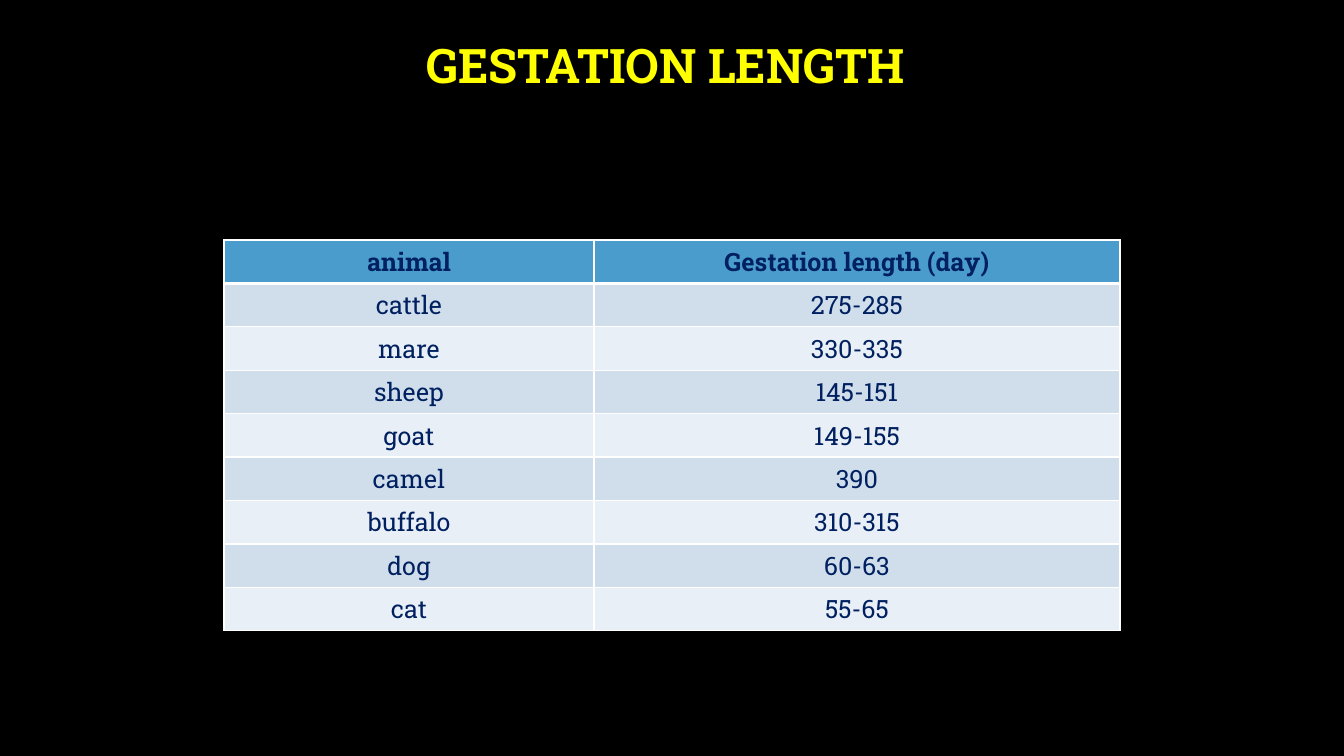
from lxml.etree import SubElement
from pptx import Presentation
from pptx.dml.color import RGBColor
from pptx.enum.text import MSO_ANCHOR as Anchor, MSO_AUTO_SIZE as AutoSize, PP_ALIGN as Align
from pptx.oxml.ns import qn
from pptx.util import Pt

BLACK = RGBColor(0x00, 0x00, 0x00)
WHITE = RGBColor(0xFF, 0xFF, 0xFF)
YELLOW = RGBColor(0xFF, 0xFF, 0x00)
NAVY = RGBColor(0x00, 0x20, 0x60)
HEADER_BLUE = RGBColor(0x4A, 0x9C, 0xCC)
BAND_DARK = RGBColor(0xD0, 0xDE, 0xEC)
BAND_LIGHT = RGBColor(0xE9, 0xEF, 0xF6)

WIDTH, HEIGHT = 1344, 756
EMU_PER_PX = 12192000 / WIDTH

GESTATION = [
    ("animal", "Gestation length (day)"),
    ("cattle", "275-285"),
    ("mare", "330-335"),
    ("sheep", "145-151"),
    ("goat", "149-155"),
    ("camel", "390"),
    ("buffalo", "310-315"),
    ("dog", "60-63"),
    ("cat", "55-65"),
]


def px(length):
    return round(length * EMU_PER_PX)


class SlideBuilder:
    def __init__(self, page, font_name):
        self.page = page
        self.font_name = font_name

    def background(self, color):
        fill = self.page.background.fill
        fill.solid()
        fill.fore_color.rgb = color

    def centered_text(self, frame, text, size, color, bold):
        para = frame.paragraphs[0]
        para.alignment = Align.CENTER
        span = para.add_run()
        span.text = text
        font = span.font
        font.name, font.size, font.bold = self.font_name, Pt(size), bold
        font.color.rgb = color
        return para

    def title(self, text, left, top, width, height):
        box = self.page.shapes.title
        box.left, box.top, box.width, box.height = map(px, (left, top, width, height))
        frame = box.text_frame
        frame.word_wrap = True
        frame.auto_size = AutoSize.NONE
        frame.vertical_anchor = Anchor.MIDDLE
        para = self.centered_text(frame, text, 34, YELLOW, True)
        para.line_spacing = 0.9

    def border(self, cell, side, points):
        properties = cell._tc.get_or_add_tcPr()
        line = SubElement(properties, qn(f"a:ln{side}"), w=str(Pt(points)))
        fill = SubElement(line, qn("a:solidFill"))
        SubElement(fill, qn("a:srgbClr"), val=str(WHITE))

    def cell(self, cell, text, row):
        header = row == 0
        weights = {"L": 1, "R": 1, "T": 3 if row == 1 else 1, "B": 3 if header else 1}
        for side, points in weights.items():
            self.border(cell, side, points)
        cell.fill.solid()
        band = BAND_DARK if row % 2 else BAND_LIGHT
        cell.fill.fore_color.rgb = HEADER_BLUE if header else band
        self.centered_text(cell.text_frame, text, 18, NAVY, header)

    def table(self, rows, left, top, column_widths, row_height):
        frame = self.page.shapes.add_table(
            len(rows), len(column_widths), px(left), px(top),
            px(sum(column_widths)), px(row_height * len(rows)))
        table = frame.table
        for column, width in zip(table.columns, column_widths):
            column.width = px(width)
        for row, texts in enumerate(rows):
            table.rows[row].height = px(row_height)
            for column, text in enumerate(texts):
                self.cell(table.cell(row, column), text, row)


def main():
    deck = Presentation()
    deck.slide_width, deck.slide_height = px(WIDTH), px(HEIGHT)
    page = deck.slides.add_slide(deck.slide_layouts[5])
    builder = SlideBuilder(page, "Roboto Slab")
    builder.background(BLACK)
    builder.title("GESTATION LENGTH ", 101, 18, 1141, 100)
    builder.table(GESTATION, 224, 240, (370, 526), 41)
    deck.save("out.pptx")


if __name__ == "__main__":
    main()
